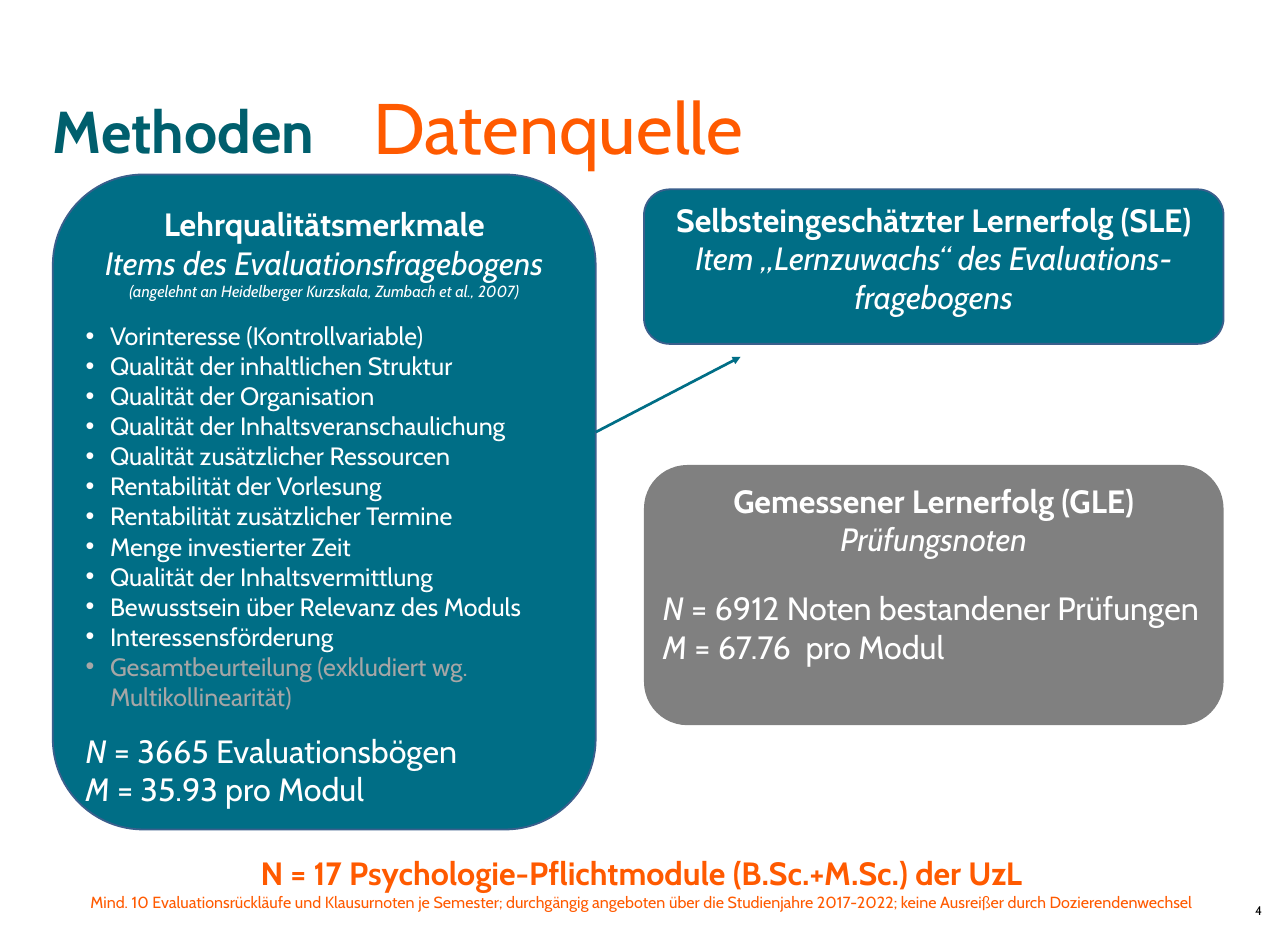
from lxml.etree import SubElement
from pptx import Presentation
from pptx.dml.color import RGBColor
from pptx.enum.shapes import MSO_CONNECTOR, MSO_SHAPE
from pptx.enum.text import MSO_ANCHOR, PP_ALIGN
from pptx.oxml.ns import qn
from pptx.util import Emu, Pt

PX = 9144  # 100 px to the inch
FONT = "Cabin"
COLORS = {"teal": "006E86", "dark": "005F6D", "orange": "FF5A00", "grey": "808080",
          "muted": "A6A6A6", "edge": "3A5F8C", "white": "FFFFFF", "black": "000000"}

# Paragraph styles: text format, alignment, bullet and indent
STYLES = {
    "number": {"size": 14, "color": "black", "indent": 13},
    "title": {"size": 66, "color": "dark", "bold": True},
    "subtitle": {"size": 80, "color": "orange"},
    "head": {"size": 36, "bold": True, "center": True},
    "sub": {"size": 36, "italic": True, "center": True},
    "source": {"size": 18, "italic": True, "center": True},
    "item": {"size": 28, "bullet": True, "indent": 38},
    "excluded": {"size": 28, "bullet": True, "indent": 38, "color": "muted"},
    "stat": {"size": 36},
    "sample": {"size": 36, "bold": True, "center": True, "color": "orange"},
    "criteria": {"size": 18, "center": True, "color": "orange"},
}

ITEMS = [
    "Vorinteresse (Kontrollvariable)",
    "Qualität der inhaltlichen Struktur",
    "Qualität der Organisation",
    "Qualität der Inhaltsveranschaulichung",
    "Qualität zusätzlicher Ressourcen",
    "Rentabilität der Vorlesung",
    "Rentabilität zusätzlicher Termine",
    "Menge investierter Zeit",
    "Qualität der Inhaltsvermittlung",
    "Bewusstsein über Relevanz des Moduls",
    "Interessensförderung",
]

# Paragraphs are (style, text, space before in pt); a "stat" text is (symbol, rest)
QUALITY = [
    ("head", "Lehrqualitätsmerkmale", 0),
    ("sub", "Items des Evaluationsfragebogens", 0),
    ("source", "(angelehnt an Heidelberger Kurzskala, Zumbach et al., 2007)", 0),
    *[("item", text, 0 if i else 22) for i, text in enumerate(ITEMS)],
    ("excluded", "Gesamtbeurteilung (exkludiert wg. Multikollinearität)", 0),
    ("stat", ("N", " = 3665 Evaluationsbögen"), 22),
    ("stat", ("M", " = 35.93 pro Modul"), 0),
]
MEASURED = [
    ("head", "Gemessener Lernerfolg (GLE)", 0),
    ("sub", "Prüfungsnoten", 0),
    ("stat", ("N", " = 6912 Noten bestandener Prüfungen"), 34),
    ("stat", ("M", " = 67.76  pro Modul"), 0),
]
SELF_RATED = [
    ("head", "Selbsteingeschätzter Lernerfolg (SLE)", 0),
    ("sub", "Item „Lernzuwachs“ des Evaluations-fragebogens", 0),
]
FOOTER = [
    ("sample", "N = 17 Psychologie-Pflichtmodule (B.Sc.+M.Sc.) der UzL", 0),
    ("criteria", "Mind. 10 Evaluationsrückläufe und Klausurnoten je Semester; durchgängig "
     "angeboten über die Studienjahre 2017-2022; keine Ausreißer durch Dozierendenwechsel", 0),
]

# Text boxes: left, top, width, height, inset kept, paragraphs
TEXTS = [
    (1936, 1402, 26, 22, False, [("number", "4", 0)]),
    (82, 147, 1836, 111, False, [("title", "Methoden", 0)]),
    (580, 129, 1263, 135, False, [("subtitle", "Datenquelle", 0)]),
    (117, 1320, 1758, 101, True, FOOTER),
]
# Cards: left, top, width, height, fill, edge, paragraphs
CARDS = [
    (82, 271, 843, 1017, "teal", "edge", QUALITY),
    (1000, 722, 900, 404, "grey", None, MEASURED),
    (1000, 294, 900, 240, "teal", "edge", SELF_RATED),
]
ARROW = (925, 671, 1150, 554)


def px(*values):
    return [Emu(v * PX) for v in values]


def rgb(name):
    return RGBColor.from_string(COLORS[name])


def write(tf, paragraphs):
    tf.word_wrap = True
    tf.vertical_anchor = MSO_ANCHOR.TOP
    for i, (name, text, before) in enumerate(paragraphs):
        style = STYLES[name]
        p = tf.paragraphs[0] if i == 0 else tf.add_paragraph()
        p.alignment = PP_ALIGN.CENTER if style.get("center") else PP_ALIGN.LEFT
        if before:
            p.space_before = Pt(before)
        pPr = p._p.get_or_add_pPr()
        indent = style.get("indent", 0) * PX
        pPr.set("marL", str(indent))
        if style.get("bullet"):
            pPr.set("indent", str(-indent))
            SubElement(pPr, qn("a:buFont")).set("typeface", "Arial")
            SubElement(pPr, qn("a:buChar")).set("char", "•")
        for j, part in enumerate([text] if isinstance(text, str) else text):
            r = p.add_run()
            r.text = part
            symbol = not isinstance(text, str) and j == 0
            formats = {"name": FONT, "size": Pt(style["size"]),
                       "bold": style.get("bold", False),
                       "italic": symbol or style.get("italic", False)}
            for key, value in formats.items():
                setattr(r.font, key, value)
            r.font.color.rgb = rgb(style.get("color", "white"))


prs = Presentation()
prs.slide_width, prs.slide_height = px(2000, 1458)
s = prs.slides.add_slide(prs.slide_layouts[6])

# Headings, page number and footer
for *box, inset, paragraphs in TEXTS:
    tf = s.shapes.add_textbox(*px(*box)).text_frame
    if not inset:
        for side in ("left", "top", "right", "bottom"):
            setattr(tf, f"margin_{side}", 0)
    write(tf, paragraphs)

# Rounded cards
for *box, fill, edge, paragraphs in CARDS:
    sp = s.shapes.add_shape(MSO_SHAPE.ROUNDED_RECTANGLE, *px(*box))
    sp.shadow.inherit = False
    sp.fill.solid()
    sp.fill.fore_color.rgb = rgb(fill)
    if edge:
        sp.line.color.rgb = rgb(edge)
        sp.line.width = Pt(2)
    else:
        sp.line.fill.background()
    write(sp.text_frame, paragraphs)

# Arrow from the quality items to the self-rated outcome
arrow = s.shapes.add_connector(MSO_CONNECTOR.STRAIGHT, *px(*ARROW))
arrow.line.color.rgb = rgb("teal")
arrow.line.width = Pt(3)
SubElement(arrow.line._get_or_add_ln(), qn("a:tailEnd")).set("type", "triangle")
SubElement(arrow._element.spPr, qn("a:effectLst"))

prs.save("out.pptx")
